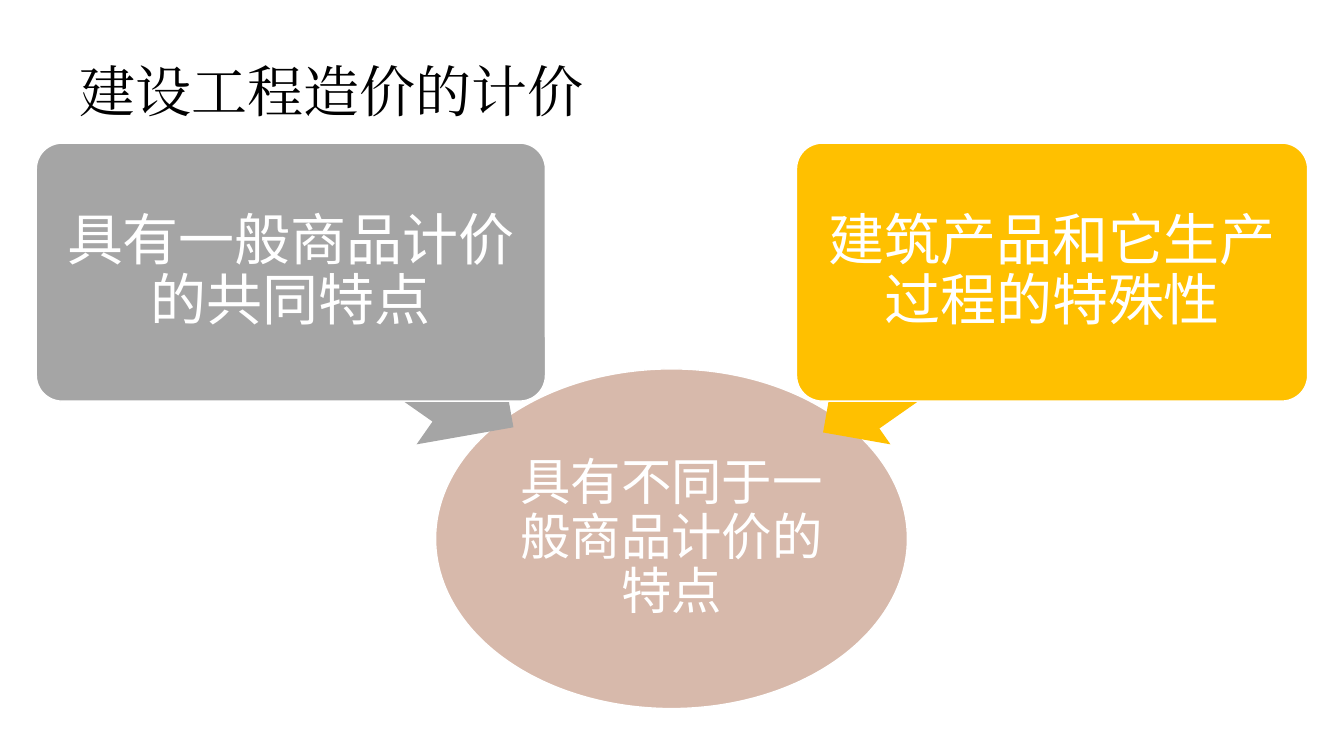
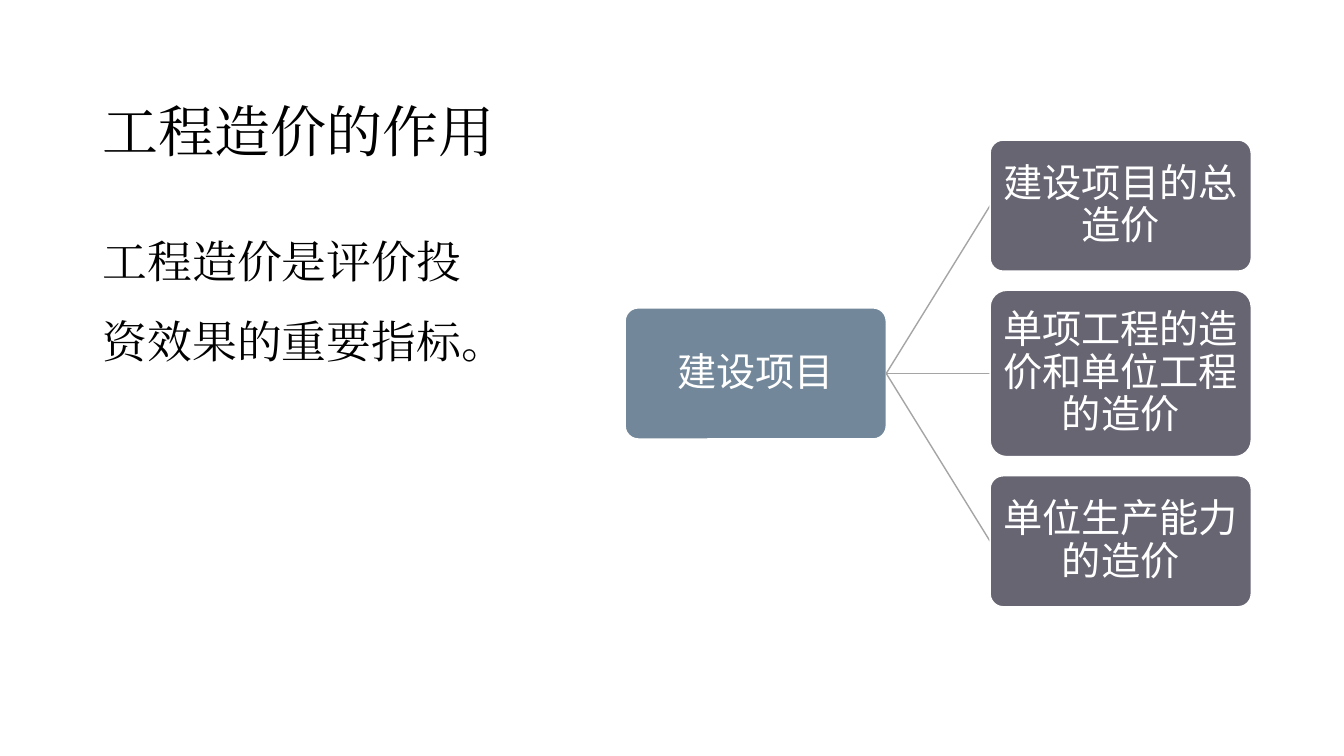
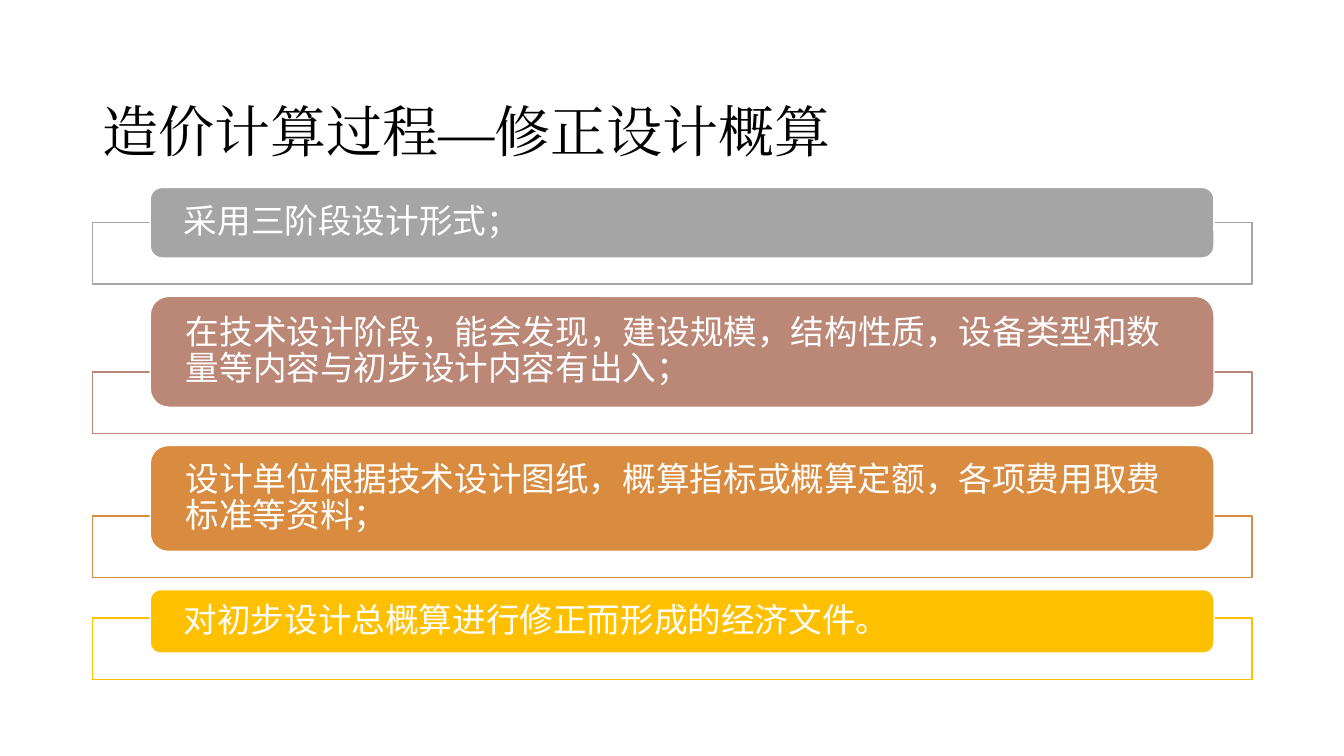
from lxml.etree import SubElement
from pptx import Presentation
from pptx.dml.color import RGBColor
from pptx.enum.shapes import MSO_CONNECTOR, MSO_SHAPE as SHAPE
from pptx.enum.text import MSO_ANCHOR as ANCHOR, PP_ALIGN as ALIGN
from pptx.oxml.ns import qn
from pptx.util import Inches, Pt

WIDTH, HEIGHT = 13.33, 7.5
MARGIN, CONTENT_WIDTH = 0.92, 11.5
TITLE_HEIGHT = 1.45
SANS, SERIF = "Noto Sans CJK SC", "Times New Roman"
WHITE, BLACK = "FFFFFF", "000000"
GREY, GOLD, ROSE, ORANGE = "A5A5A5", "FFC000", "BB8776", "D98B3F"
PALE, STEEL, SLATE = "D7B9AB", "728799", "686573"

PRICING = {
    "title": "建设工程造价的计价",
    "result": "具有不同于一般商品计价的特点",
    # text, colour, box (left, width), arrow (left, top, width, height, turn)
    "causes": [
        ("具有一般商品计价的共同特点", GREY, (0.36, 5.05), (2.4, 2.7, 2.96, 1.38, 215)),
        ("建筑产品和它生产过程的特殊性", GOLD, (7.9, 5.07), (7.88, 2.91, 3.14, 0.96, 325)),
    ],
}
ROLE = {
    "title": "工程造价的作用",
    "body": "工程造价是评价投资效果的重要指标。",
    "root": "建设项目",
    "branches": [("建设项目的总造价", 1.3), ("单项工程的造价和单位工程的造价", 1.65),
                 ("单位生产能力的造价", 1.3)],
}
REVISION = {
    "title": "造价计算过程—修正设计概算",
    "steps": [
        ("采用三阶段设计形式；", GREY, 0.7),
        ("在技术设计阶段，能会发现，建设规模，结构性质，设备类型和数量等内容与初步设计内容有出入；", ROSE, 1.1),
        ("设计单位根据技术设计图纸，概算指标或概算定额，各项费用取费标准等资料；", ORANGE, 1.05),
        ("对初步设计总概算进行修正而形成的经济文件。", GOLD, 0.63),
    ],
}


def color(value):
    return RGBColor.from_string(value)


def write(shape, text, size, font, ink, spacing, align=ALIGN.LEFT,
          anchor=ANCHOR.MIDDLE, inset=(0.1, 0.05)):
    frame = shape.text_frame
    frame.word_wrap = True
    frame.vertical_anchor = anchor
    frame.margin_left = frame.margin_right = Inches(inset[0])
    frame.margin_top = frame.margin_bottom = Inches(inset[1])
    para = frame.paragraphs[0]
    para.text = text
    para.alignment = align
    para.line_spacing = spacing
    para.font.size = Pt(size)
    para.font.name = font
    para.font.color.rgb = color(ink)
    east_asian = SubElement(para._p.pPr.find(qn("a:defRPr")), qn("a:ea"))
    east_asian.set("typeface", font)
    return para


def add_text(page, area, text, size, anchor):
    box = page.shapes.add_textbox(*map(Inches, area))
    return write(box, text, size, SERIF, BLACK, 1.5, anchor=anchor)


def add_shape(page, kind, area, fill, line=WHITE, adjust=()):
    shape = page.shapes.add_shape(kind, *map(Inches, area))
    shape.shadow.inherit = False
    shape.fill.solid()
    shape.fill.fore_color.rgb = color(fill)
    if line:
        shape.line.color.rgb = color(line)
        shape.line.width = Pt(1)
    else:
        shape.line.fill.background()
    for index, value in enumerate(adjust):
        shape.adjustments[index] = value
    return shape


def add_label(page, kind, area, fill, text, size, inset, align=ALIGN.CENTER, adjust=()):
    """Filled shape with white text."""
    shape = add_shape(page, kind, area, fill, adjust=adjust)
    write(shape, text, size, SANS, WHITE, 0.9, align, inset=inset)


def add_line(page, start, end):
    line = page.shapes.add_connector(MSO_CONNECTOR.STRAIGHT, *map(Inches, start + end))
    line.line.color.rgb = color(GREY)
    line.line.width = Pt(1)
    SubElement(line._element.spPr, qn("a:effectLst"))


def new_page(deck, title, left=MARGIN, top=0.4):
    page = deck.slides.add_slide(deck.slide_layouts[6])
    add_text(page, (left, top, CONTENT_WIDTH, TITLE_HEIGHT), title, 40, ANCHOR.MIDDLE)
    return page


def build_pricing(deck):
    page = new_page(deck, PRICING["title"], 0.69, 0)
    add_label(page, SHAPE.OVAL, (4.32, 3.66, 4.68, 3.37), PALE,
              PRICING["result"], 36, (0.03, 0.03))
    for text, fill, (left, width), (*arrow_area, turn) in PRICING["causes"]:
        arrow = add_shape(page, SHAPE.LEFT_ARROW, arrow_area, fill, None, (0.6, 0.5))
        arrow.rotation = turn
        add_label(page, SHAPE.ROUNDED_RECTANGLE, (left, 1.42, width, 2.56), fill,
                  text, 40, (0.08, 0.08), adjust=(0.1,))


def build_role(deck):
    page = new_page(deck, ROLE["title"])
    body = add_text(page, (MARGIN, 2, 4.11, 4.76), ROLE["body"], 32, ANCHOR.TOP)
    body.space_before = Pt(10)

    width, gap, top = 2.59, 0.19, 1.39
    root_left, branch_left = 6.2, 9.82
    heights = [height for _, height in ROLE["branches"]]
    middle = top + (sum(heights) + gap * (len(heights) - 1)) / 2

    def add_node(left, center, height, fill, text):
        add_label(page, SHAPE.ROUNDED_RECTANGLE, (left, center - height / 2, width, height),
                  fill, text, 28, (0.02, 0.02), adjust=(0.1,))

    add_node(root_left, middle, 1.3, STEEL, ROLE["root"])
    for text, height in ROLE["branches"]:
        center = top + height / 2
        add_line(page, (root_left + width, middle), (branch_left, center))
        add_node(branch_left, center, height, SLATE, text)
        top += height + gap


def build_revision(deck):
    page = new_page(deck, REVISION["title"])
    top, gap, overlap = 1.86, 0.38, 0.35
    for text, fill, height in REVISION["steps"]:
        add_shape(page, SHAPE.RECTANGLE,
                  (MARGIN, top + height - overlap, CONTENT_WIDTH, 0.61), WHITE, fill)
        add_label(page, SHAPE.ROUNDED_RECTANGLE, (1.49, top, 10.55, height), fill,
                  text, 24, (0.3, 0), ALIGN.LEFT)
        top += height + gap


def main():
    deck = Presentation()
    deck.slide_width, deck.slide_height = Inches(WIDTH), Inches(HEIGHT)
    for build in (build_pricing, build_role, build_revision):
        build(deck)
    deck.save("out.pptx")


if __name__ == "__main__":
    main()
